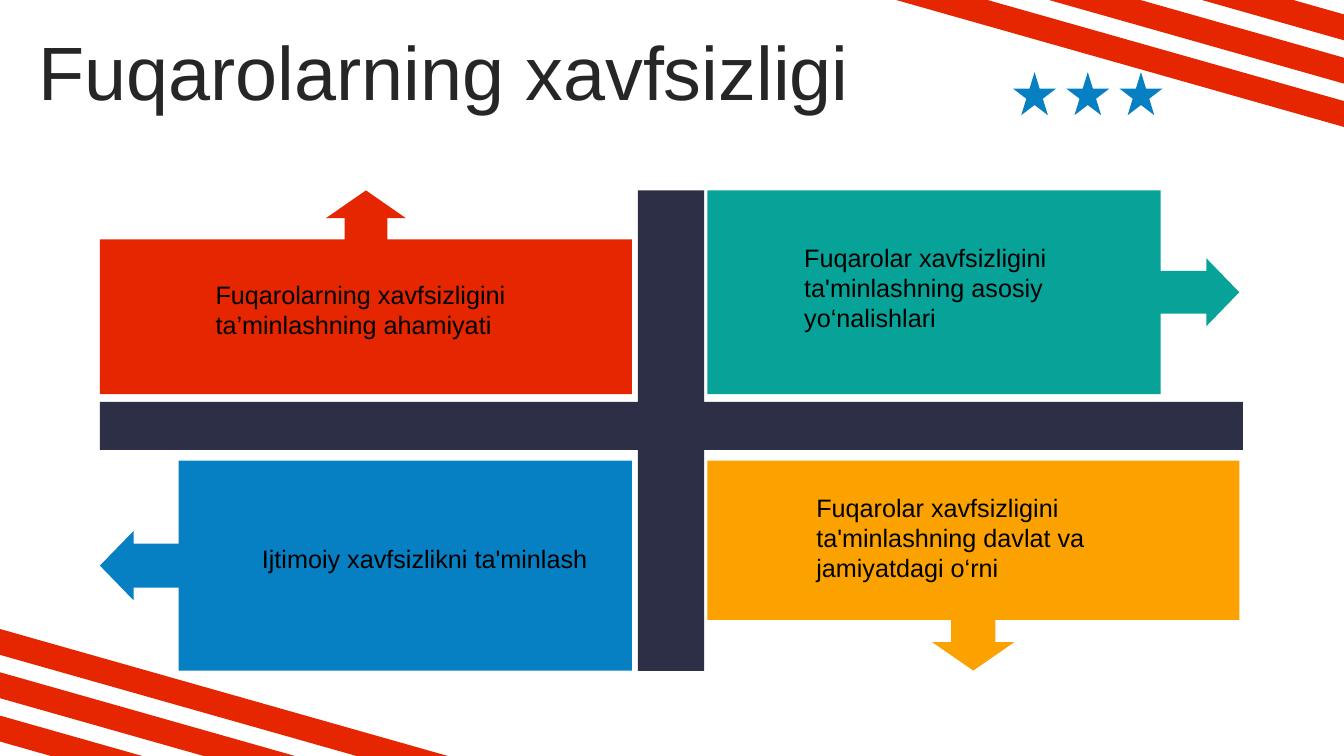
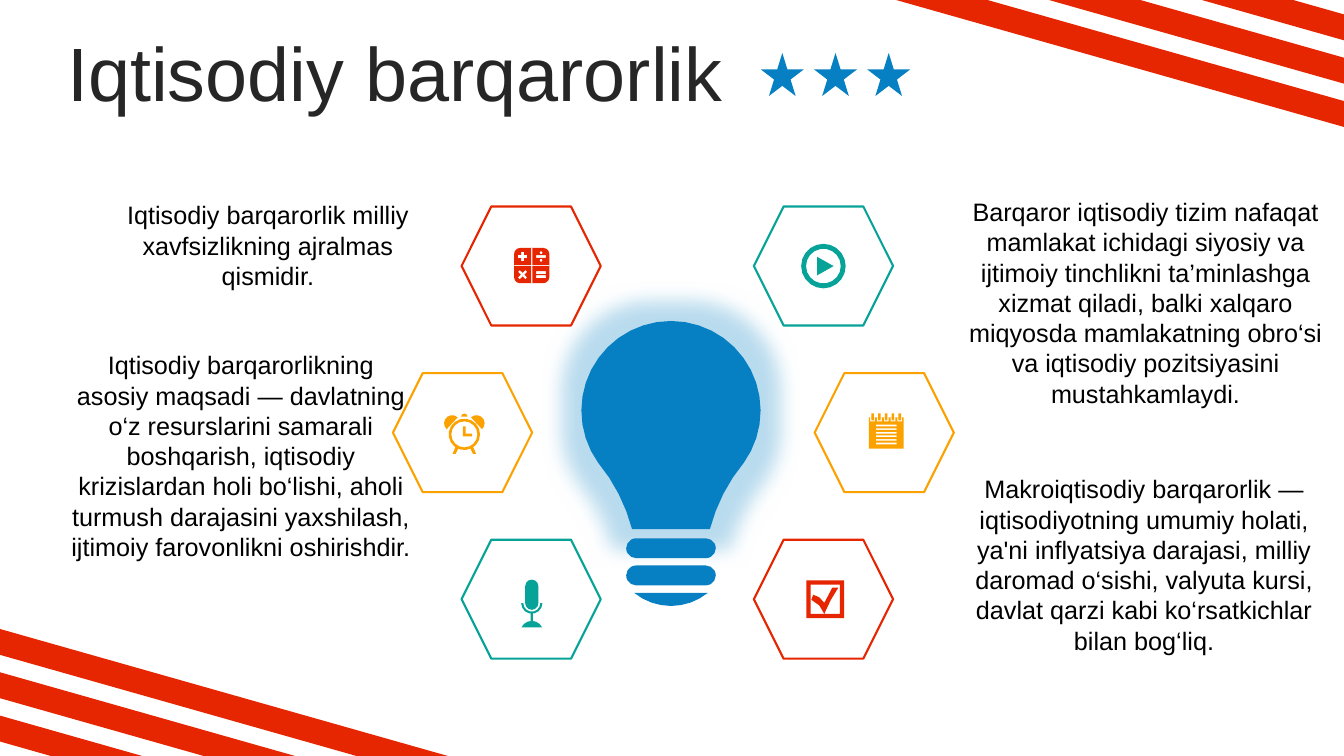
from math import ceil, cos, radians, sin, sqrt

from lxml.etree import SubElement
from pptx import Presentation
from pptx.dml.color import RGBColor
from pptx.enum.shapes import MSO_SHAPE
from pptx.enum.text import MSO_ANCHOR, PP_ALIGN
from pptx.oxml.ns import qn
from pptx.util import Pt

COLOURS = {
    "red": "E62601", "blue": "0680C3", "teal": "07A398", "amber": "FBA200",
    "navy": "2C2F45", "title": "262626", "text": "000000", "white": "FFFFFF",
}
FONT = "Arial"
WIDTH, HEIGHT = 960, 540


def paint(shape, colour):
    """Flat fill without line or shadow."""
    shape.shadow.inherit = False
    shape.fill.solid()
    shape.fill.fore_color.rgb = RGBColor.from_string(COLOURS[colour])
    shape.line.fill.background()
    return shape


def outline(slide, contours, colour, centre=(0, 0)):
    """Freeform of closed contours; inner contours become holes.

    A contour part is a point (x, y), a rectangle (left, top, right, bottom)
    or an arc (x, y, radius, start angle, end angle).
    """
    builder = None
    for contour in contours:
        points = []
        for part in contour:
            if len(part) == 2:
                points.append(part)
            elif len(part) == 4:
                left, top, right, bottom = part
                points += [(left, top), (right, top), (right, bottom), (left, bottom)]
            else:
                x, y, radius, start, end = part
                # Larger arcs get finer steps
                steps = ceil(abs(end - start) * sqrt(radius) / 72)
                angles = [radians(start + (end - start) * i / steps) for i in range(steps + 1)]
                points += [(x + radius * cos(a), y + radius * sin(a)) for a in angles]
        points = [(Pt(centre[0] + x), Pt(centre[1] + y)) for x, y in points]
        if builder is None:
            builder = slide.shapes.build_freeform(*points[0])
        else:
            builder.move_to(*points[0])
        builder.add_line_segments(points[1:], close=True)
    return paint(builder.convert_to_shape(), colour)


prs = Presentation()
prs.slide_width, prs.slide_height = Pt(WIDTH), Pt(HEIGHT)
blank = prs.slide_layouts[6]
safety = prs.slides.add_slide(blank)
economy = prs.slides.add_slide(blank)

# Corner stripes, kept on the layout so that both slides share them
SLOPE, STRIPE_TOP, STRIPE_STEP, STRIPE_HEIGHT = 0.2835, 449.3, 30.95, 18.5
stripes = []
for i in range(3):
    top = STRIPE_TOP + i * STRIPE_STEP
    bottom = top + STRIPE_HEIGHT
    stripes.append([(0, top), ((HEIGHT - top) / SLOPE, HEIGHT),
                    ((HEIGHT - bottom) / SLOPE, HEIGHT), (0, bottom)])
opposite = [[(WIDTH - x, HEIGHT - y) for x, y in stripe] for stripe in stripes]
for corner in (stripes, opposite):
    blank.shapes.element.insert(2, outline(safety, corner, "red").element)

# Three stars beside each title
for slide, left, top in ((safety, 723.6, 51.5), (economy, 543.4, 37.8)):
    for i in range(3):
        paint(slide.shapes.add_shape(MSO_SHAPE.STAR_5_POINT, Pt(left + 38 * i), Pt(top),
                                     Pt(30.8), Pt(30.8)), "blue")

# Slide 1: four arrow callouts around a cross
LEFT, RIGHT, CALLOUT_WIDTH = 71.4, 505.2, 380
UPPER, LOWER = (136, 145.5), (329, 150)
ALONG = (0.21, 0.196, 0.136, 0.759)
ACROSS = (0.21, 0.166, 0.161, 0.852)
for colour, left, (top, height), turn, ratios in (
    ("red", LEFT, UPPER, 0, ALONG),
    ("amber", RIGHT, LOWER, 180, ALONG),
    ("teal", RIGHT, UPPER, 90, ACROSS),
    ("blue", LEFT, LOWER, 270, ACROSS),
):
    mid_x, mid_y = left + CALLOUT_WIDTH / 2, top + height / 2
    w, h = (height, CALLOUT_WIDTH) if turn in (90, 270) else (CALLOUT_WIDTH, height)
    callout = paint(safety.shapes.add_shape(
        MSO_SHAPE.UP_ARROW_CALLOUT, Pt(mid_x - w / 2), Pt(mid_y - h / 2), Pt(w), Pt(h)), colour)
    callout.rotation = turn
    for i, ratio in enumerate(ratios):
        callout.adjustments[i] = ratio
for bar in ((455.6, 136, 47.4, 343.2), (71.4, 287.1, 816.5, 34.2)):
    paint(safety.shapes.add_shape(MSO_SHAPE.RECTANGLE, *map(Pt, bar)), "navy")

# Slide 2: light bulb with a glow
AXIS = 479.3
bulb = outline(economy, [[(AXIS, 293.3, 64, 144.2, 395.8),
                          (AXIS + 147.6, 409.2, 123.8, 219.5, 194.6),
                          (AXIS - 147.6, 409.2, 123.8, 345.4, 320.5)]], "blue")
glow = SubElement(bulb.element.spPr.find(qn("a:effectLst")), qn("a:glow"), rad=str(Pt(28)))
halo = SubElement(glow, qn("a:srgbClr"), val=COLOURS["blue"])
SubElement(halo, qn("a:alpha"), val="28000")
for top in (384.5, 403.9):
    thread = paint(economy.shapes.add_shape(MSO_SHAPE.ROUNDED_RECTANGLE, Pt(AXIS - 32), Pt(top),
                                            Pt(64), Pt(14.2)), "blue")
    thread.adjustments[0] = 0.5
outline(economy, [[(AXIS, 391, 41.8, 51, 129)]], "blue")

# Hexagons: centre, line colour, opacity of the white fill in percent
for x, y, colour, opacity in (
    (588.2, 190, "teal", 30), (631.6, 309, "amber", 10), (588.2, 428, "red", 0),
    (379.4, 190, "red", 0), (330.4, 309, "amber", 10), (379.4, 428, "teal", 30),
):
    hexagon = paint(economy.shapes.add_shape(MSO_SHAPE.HEXAGON, Pt(x - 49.7), Pt(y - 42.5),
                                             Pt(99.4), Pt(85)), "white")
    if opacity:
        white = hexagon.element.spPr.find(qn("a:solidFill"))[0]
        SubElement(white, qn("a:alpha"), val=str(opacity * 1000))
    else:
        hexagon.fill.background()
    hexagon.line.color.rgb = RGBColor.from_string(COLOURS[colour])
    hexagon.line.width = Pt(1.5)

# Icons, each drawn around its own centre
plus = [(-1.1, -3.3), (1.1, -3.3), (1.1, -1.1), (3.3, -1.1), (3.3, 1.1), (1.1, 1.1),
        (1.1, 3.3), (-1.1, 3.3), (-1.1, 1.1), (-3.3, 1.1), (-3.3, -1.1), (-1.1, -1.1)]
times = [(-2, -3.3), (0, -1.3), (2, -3.3), (3.3, -2), (1.3, 0), (3.3, 2),
         (2, 3.3), (0, 1.3), (-2, 3.3), (-3.3, 2), (-1.3, 0), (-3.3, -2)]
calculator = [
    [(8.3, 8.3, 4.3, 0, 90), (-8.3, 8.3, 4.3, 90, 180),
     (-8.3, -8.3, 4.3, 180, 270), (8.3, -8.3, 4.3, 270, 360)],
    [(-0.4, -12.6), (0.4, -12.6), (0.4, -0.4), (12.6, -0.4), (12.6, 0.4), (0.4, 0.4),
     (0.4, 12.6), (-0.4, 12.6), (-0.4, 0.4), (-12.6, 0.4), (-12.6, -0.4), (-0.4, -0.4)],
    [(x - 6.5, y - 6.5) for x, y in plus],
    [(x - 6.5, y + 6.5) for x, y in times],
    [(3.2, -7.5, 10.2, -5.5)], [(6.7, -9.2, 1.1, 0, 360)], [(6.7, -3.8, 1.1, 0, 360)],
    [(3.2, 4, 10.2, 6.1)], [(3.2, 6.9, 10.2, 9)],
]
play = [[(0, 0, 15.9, 0, 360)], [(0, 0, 12.4, 0, 360)], [(-4.4, -6.6), (7.3, 0), (-4.4, 6.6)]]
leg = [(-4.4, 10.3), (-6.2, 13.9), (-8.4, 13.9), (-6.4, 9.2)]
clock = [
    [(0, 0, 11.2, 0, 360)], [(0, 0, 9.3, 0, 360)],
    [(-1, -5.8), (1, -5.8), (1, -0.6), (5.6, -0.6), (5.6, 1.5), (-1, 1.5)],
    leg, [(-x, y) for x, y in leg],
    [(-8.7, -7.9, 5.8, 133, 313)], [(8.7, -7.9, 5.8, 227, 407)],
    [(0, -12.6, 2.3, 180, 360)],
]
notepad = [[(-12.4, -9.7, 12.4, 12.6)]]
notepad += [[(-7.4, y - 0.6, 7.4, y + 0.6)] for y in (-3.8 + 2.55 * i for i in range(6))]
for x in (-9.7 + 4.85 * i for i in range(5)):
    notepad += [[(x - 1.7, -9.7, x + 1.7, -6.8)], [(x - 0.9, -12.6, x + 0.9, -7.6)]]
microphone = [
    [(0, -12.3, 4.7, 180, 360), (0, -0.1, 4.7, 0, 180)],
    [(0, -0.2, 7.6, 0, 180), (0, -0.2, 6.1, 180, 0)],
    [(-0.8, 7.4, 0.8, 12.5)],
    [(0, 20.7, 8.2, 205.5, 334.5)],
]
checkbox = [
    [(-13.5, -13.5, 13.5, 13.5)], [(-10.4, -10.4, 10.4, 10.4)],
    [(-0.7, 10.4), (-4.3, 4.4), (-10, 0.4), (-8.6, -3.2), (-4.3, -1.4),
     (-0.7, 2.6), (5, -8.2), (9.3, -8.2), (4, 0.4)],
]
for icon, colour, centre in (
    (calculator, "red", (379.8, 189.7)), (play, "teal", (588.2, 190.1)),
    (clock, "amber", (331.7, 310.3)), (notepad, "amber", (633, 307.8)),
    (microphone, "teal", (379.9, 431)), (checkbox, "red", (589.5, 428)),
):
    outline(economy, icon, colour, centre)

# Titles
for slide, left, top, title in (
    (safety, 20.2, 25.9, "Fuqarolarning xavfsizligi"),
    (economy, 41, 26.6, "Iqtisodiy barqarorlik"),
):
    frame = slide.shapes.add_textbox(Pt(left), Pt(top), Pt(870), Pt(57)).text_frame
    frame.word_wrap = True
    frame.vertical_anchor = MSO_ANCHOR.MIDDLE
    heading = frame.paragraphs[0]
    heading.text = title
    heading.line_spacing, heading.space_before = 0.9, Pt(10)
    heading.font.name, heading.font.size = FONT, Pt(54)
    heading.font.color.rgb = RGBColor.from_string(COLOURS["title"])

# Body texts: slide, alignment, box, wording
for slide, align, box, wording in (
    (safety, PP_ALIGN.LEFT, (146.9, 195.8, 300, 51),
     "Fuqarolarning xavfsizligini ta’minlashning ahamiyati"),
    (safety, PP_ALIGN.LEFT, (567.4, 169.2, 268, 73),
     "Fuqarolar xavfsizligini ta'minlashning asosiy yo‘nalishlari"),
    (safety, PP_ALIGN.LEFT, (180, 384.5, 483, 29), "Ijtimoiy xavfsizlikni ta'minlash"),
    (safety, PP_ALIGN.LEFT, (576, 347.8, 296, 73),
     "Fuqarolar xavfsizligini ta'minlashning davlat va jamiyatdagi o‘rni"),
    (economy, PP_ALIGN.CENTER, (63.2, 139, 256.3, 73),
     "Iqtisodiy barqarorlik milliy xavfsizlikning ajralmas qismidir."),
    (economy, PP_ALIGN.CENTER, (676.5, 136.8, 283.5, 160),
     "Barqaror iqtisodiy tizim nafaqat mamlakat ichidagi siyosiy va ijtimoiy tinchlikni "
     "ta’minlashga xizmat qiladi, balki xalqaro miqyosda mamlakatning obro‘si va iqtisodiy "
     "pozitsiyasini mustahkamlaydi."),
    (economy, PP_ALIGN.CENTER, (43.9, 246.2, 256.3, 182),
     "Iqtisodiy barqarorlikning asosiy maqsadi — davlatning o‘z resurslarini samarali "
     "boshqarish, iqtisodiy krizislardan holi bo‘lishi, aholi turmush darajasini yaxshilash, "
     "ijtimoiy farovonlikni oshirishdir."),
    (economy, PP_ALIGN.CENTER, (675.4, 334.8, 283.5, 138),
     "Makroiqtisodiy barqarorlik — iqtisodiyotning umumiy holati, ya'ni inflyatsiya darajasi, "
     "milliy daromad o‘sishi, valyuta kursi, davlat qarzi kabi ko‘rsatkichlar bilan bog‘liq."),
):
    frame = slide.shapes.add_textbox(*map(Pt, box)).text_frame
    frame.word_wrap = True
    body = frame.paragraphs[0]
    body.text, body.alignment = wording, align
    body.font.name, body.font.size = FONT, Pt(18)
    body.font.color.rgb = RGBColor.from_string(COLOURS["text"])

prs.save("out.pptx")
